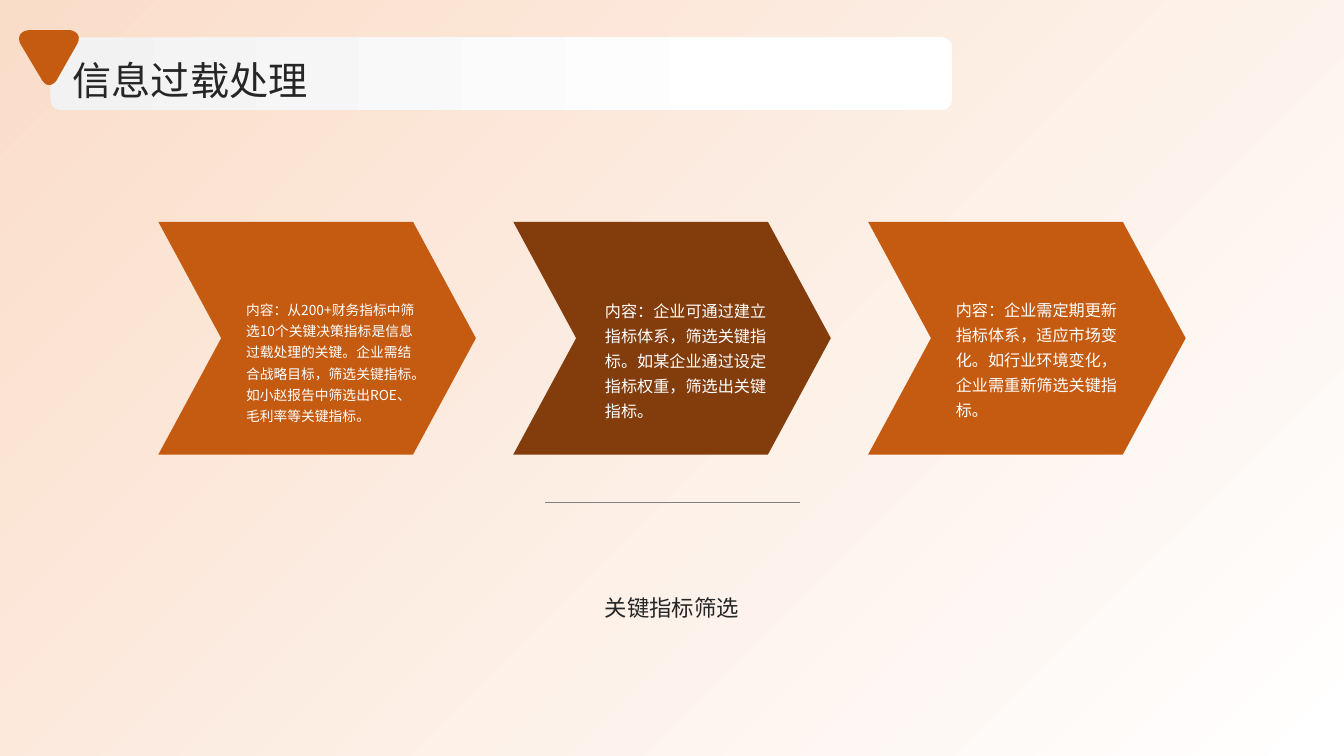
from dataclasses import dataclass

from lxml.etree import SubElement
from pptx import Presentation
from pptx.dml.color import RGBColor
from pptx.enum.shapes import MSO_CONNECTOR, MSO_SHAPE
from pptx.enum.text import MSO_ANCHOR, PP_ALIGN
from pptx.oxml.ns import qn
from pptx.util import Inches, Pt

Point = tuple[float, float]
Box = tuple[float, float, float, float]


@dataclass(frozen=True)
class Theme:
    font: str = "Noto Sans CJK SC"
    orange: str = "C55A11"
    brown: str = "833C0B"
    peach: str = "FADDC9"
    pale: str = "F2F2F2"
    white: str = "FFFFFF"
    ink: str = "262626"
    grey: str = "808080"
    title: float = 28
    label: float = 16
    body: float = 11.5
    small: float = 9.8


@dataclass(frozen=True)
class Step:
    fill: str
    size: float
    box: Box
    text: str


THEME = Theme()
WIDTH, HEIGHT = 13.33, 7.5
ARROW_W, ARROW_H, ARROW_TOP, PITCH = 3.15, 2.31, 2.2, 3.52

STEPS = [
    Step(THEME.orange, THEME.small, (2.44, 2.94, 1.69, 1.21),
         "内容：从200+财务指标中筛选10个关键决策指标是信息过载处理的关键。"
         "企业需结合战略目标，筛选关键指标。如小赵报告中筛选出ROE、毛利率等关键指标。"),
    Step(THEME.brown, THEME.body, (6, 2.93, 1.63, 1.21),
         "内容：企业可通过建立指标体系，筛选关键指标。"
         "如某企业通过设定指标权重，筛选出关键指标。"),
    Step(THEME.orange, THEME.body, (9.48, 2.92, 1.66, 1.21),
         "内容：企业需定期更新指标体系，适应市场变化。"
         "如行业环境变化，企业需重新筛选关键指标。"),
]

# Each rounded corner of the badge: start, two handles, end
CORNERS: list[tuple[Point, Point, Point, Point]] = [
    ((0.7, 0.3), (0.7, 0.3), (0.82, 0.32), (0.77, 0.43)),
    ((0.56, 0.8), (0.56, 0.8), (0.49, 0.9), (0.42, 0.8)),
    ((0.2, 0.43), (0.2, 0.43), (0.15, 0.32), (0.28, 0.3)),
]


def place(sides: Box | Point) -> list[int]:
    return [Inches(side) for side in sides]


def paint(shape, color: str) -> None:
    shape.fill.solid()
    shape.fill.fore_color.rgb = RGBColor.from_string(color)
    shape.line.fill.background()
    shape.shadow.inherit = False


def blend(shape, first: str, last: str, end: float, angle: float) -> None:
    """Fill with two colours; the angle runs counter-clockwise."""
    paint(shape, first)
    shape.fill.gradient()
    shape.fill.gradient_angle = angle
    for stop, color, spot in zip(shape.fill.gradient_stops, (first, last), (0, end)):
        stop.color.rgb = RGBColor.from_string(color)
        stop.position = spot


def write(slide, box: Box, text: str, size: float, color: str, space: float,
          anchor=MSO_ANCHOR.TOP, align=PP_ALIGN.LEFT) -> None:
    frame = slide.shapes.add_textbox(*place(box)).text_frame
    para = frame.paragraphs[0]
    run = para.add_run()
    formats = {
        frame: dict(word_wrap=True, vertical_anchor=anchor, margin_left=0,
                    margin_right=0, margin_top=0, margin_bottom=0),
        para: dict(line_spacing=space, alignment=align),
        run: dict(text=text),
        run.font: dict(name=THEME.font, size=Pt(size)),
    }
    for target, values in formats.items():
        for name, value in values.items():
            setattr(target, name, value)
    run.font.color.rgb = RGBColor.from_string(color)
    SubElement(run.font._element, qn("a:ea"), typeface=THEME.font)


def curve(ends: tuple[Point, Point, Point, Point], parts: int = 10) -> list[Point]:
    """Sample a cubic curve from its start to its end."""
    points = []
    for step in range(parts + 1):
        t = step / parts
        rates = ((1 - t) ** 3, 3 * t * (1 - t) ** 2, 3 * t * t * (1 - t), t ** 3)
        points.append((sum(r * p[0] for r, p in zip(rates, ends)),
                       sum(r * p[1] for r, p in zip(rates, ends))))
    return points


def draw_badge(slide) -> None:
    points = [place(point) for corner in CORNERS for point in curve(corner)]
    pen = slide.shapes.build_freeform(*points[0])
    pen.add_line_segments(points[1:], close=True)
    paint(pen.convert_to_shape(), THEME.orange)


def draw_step(slide, index: int, step: Step) -> None:
    left = (WIDTH - ARROW_W) / 2 + (index - 1) * PITCH
    arrow = slide.shapes.add_shape(
        MSO_SHAPE.CHEVRON, *place((left, ARROW_TOP, ARROW_W, ARROW_H)))
    arrow.adjustments[0] = 0.27
    paint(arrow, step.fill)
    write(slide, step.box, step.text, step.size, THEME.white, 1.3)


def draw_rule(slide) -> None:
    rule = slide.shapes.add_connector(
        MSO_CONNECTOR.STRAIGHT, *place((5.41, 4.98, 7.93, 4.98)))
    rule.line.color.rgb = RGBColor.from_string(THEME.grey)
    rule.line.width = Pt(0.5)
    SubElement(rule._element.spPr, qn("a:effectLst"))


def main() -> None:
    deck = Presentation()
    deck.slide_width, deck.slide_height = Inches(WIDTH), Inches(HEIGHT)
    slide = deck.slides.add_slide(deck.slide_layouts[6])

    back = slide.shapes.add_shape(MSO_SHAPE.RECTANGLE, *place((0, 0, WIDTH, HEIGHT)))
    blend(back, THEME.white, THEME.peach, 1, 135)

    for index, step in enumerate(STEPS):
        draw_step(slide, index, step)
    draw_rule(slide)
    write(slide, (1.28, 5.22, 10.77, 0.94), "关键指标筛选", THEME.label, THEME.ink,
          1.5, MSO_ANCHOR.BOTTOM, PP_ALIGN.CENTER)

    banner = slide.shapes.add_shape(
        MSO_SHAPE.ROUNDED_RECTANGLE, *place((0.5, 0.37, 8.94, 0.72)))
    banner.adjustments[0] = 0.14
    blend(banner, THEME.pale, THEME.white, 0.8, 0)
    write(slide, (0.72, 0.51, 11.67, 0.51), "信息过载处理", THEME.title, THEME.ink,
          1.1, MSO_ANCHOR.MIDDLE)
    draw_badge(slide)

    deck.save("out.pptx")


if __name__ == "__main__":
    main()
